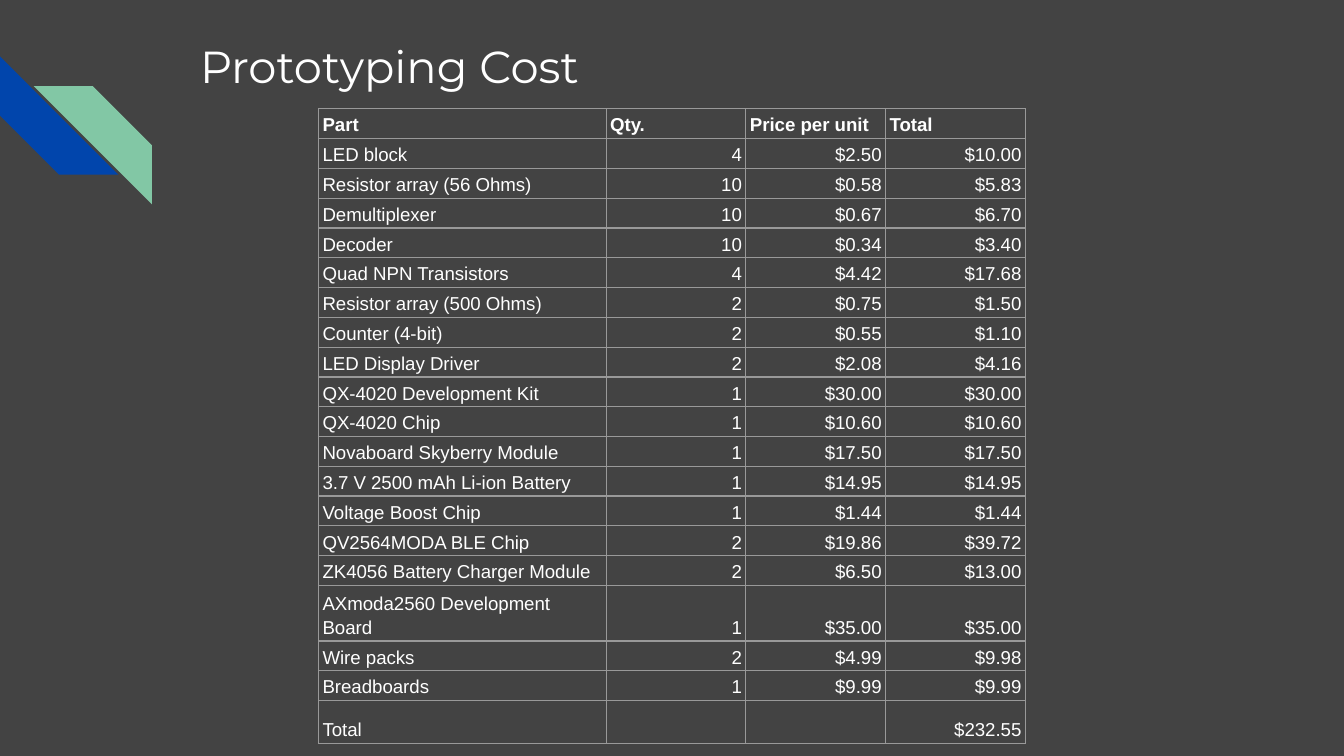
from lxml import etree
from pptx import Presentation
from pptx.dml.color import RGBColor
from pptx.enum.shapes import MSO_SHAPE
from pptx.enum.text import MSO_ANCHOR, PP_ALIGN
from pptx.oxml.ns import qn
from pptx.util import Inches, Pt

STRIPE = MSO_SHAPE.DIAGONAL_STRIPE
TOP, BOTTOM = MSO_ANCHOR.TOP, MSO_ANCHOR.BOTTOM
LEFT, RIGHT = PP_ALIGN.LEFT, PP_ALIGN.RIGHT

ROWS = [
    ("Part", "Qty.", "Price per unit", "Total"),
    ("LED block", "4", "$2.50", "$10.00"),
    ("Resistor array (56 Ohms)", "10", "$0.58", "$5.83"),
    ("Demultiplexer", "10", "$0.67", "$6.70"),
    ("Decoder", "10", "$0.34", "$3.40"),
    ("Quad NPN Transistors", "4", "$4.42", "$17.68"),
    ("Resistor array (500 Ohms)", "2", "$0.75", "$1.50"),
    ("Counter (4-bit)", "2", "$0.55", "$1.10"),
    ("LED Display Driver", "2", "$2.08", "$4.16"),
    ("QX-4020 Development Kit", "1", "$30.00", "$30.00"),
    ("QX-4020 Chip", "1", "$10.60", "$10.60"),
    ("Novaboard Skyberry Module", "1", "$17.50", "$17.50"),
    ("3.7 V 2500 mAh Li-ion Battery", "1", "$14.95", "$14.95"),
    ("Voltage Boost Chip", "1", "$1.44", "$1.44"),
    ("QV2564MODA BLE Chip", "2", "$19.86", "$39.72"),
    ("ZK4056 Battery Charger Module", "2", "$6.50", "$13.00"),
    ("AXmoda2560 Development Board", "1", "$35.00", "$35.00"),
    ("Wire packs", "2", "$4.99", "$9.98"),
    ("Breadboards", "1", "$9.99", "$9.99"),
    ("Total", "", "", "$232.55"),
]
COL_WIDTHS = [2.14, 1.04, 1.04, 1.04]
ROW_HEIGHT = 0.22


def rgb(value):
    return RGBColor.from_string(value)


def add_text(p, text, **formats):
    r = p.add_run()
    r.text = text
    r.font.color.rgb = rgb("FFFFFF")
    for name, value in formats.items():
        setattr(r.font, name, value)


# Widescreen 16:9 slide
prs = Presentation()
prs.slide_width, prs.slide_height = Inches(10), Inches(10 * 9 / 16)
slide = prs.slides.add_slide(prs.slide_layouts[6])
slide.background.fill.solid()
slide.background.fill.fore_color.rgb = rgb("434343")

# Corner stripes
for left, top, rotation, color in [(0, 0.42, 270, "0145AC"), (0.25, 0.64, 90, "82C7A5")]:
    s = slide.shapes.add_shape(STRIPE, Inches(left), Inches(top), Inches(0.88), Inches(0.88))
    s.rotation = rotation
    s.shadow.inherit = False
    s.fill.solid()
    s.fill.fore_color.rgb = rgb(color)
    s.line.fill.background()

# Title
s = slide.shapes.add_textbox(Inches(1.39), Inches(0.19), Inches(7.7), Inches(1))
tf = s.text_frame
box = {"word_wrap": True, "vertical_anchor": TOP, "margin_left": Inches(0.1),
       "margin_right": Inches(0.1), "margin_top": Inches(0.1), "margin_bottom": Inches(0.1)}
for name, value in box.items():
    setattr(tf, name, value)
add_text(tf.paragraphs[0], "Prototyping Cost", name="Montserrat", size=Pt(24))

# Cost table
frame = slide.shapes.add_table(len(ROWS), len(COL_WIDTHS), Inches(2.37), Inches(0.81),
                               Inches(sum(COL_WIDTHS)), Inches(ROW_HEIGHT * len(ROWS)))
table = frame.table
table.horz_banding = False
for column, width in zip(table.columns, COL_WIDTHS):
    column.width = Inches(width)
for row in table.rows:
    row.height = Inches(ROW_HEIGHT)
# A low frame lets the rows keep their own heights instead of being stretched
frame.height = Inches(3.28)

for i, values in enumerate(ROWS):
    for j, text in enumerate(values):
        cell = table.cell(i, j)
        formats = {"margin_left": Inches(0.03), "margin_right": Inches(0.03),
                   "margin_top": Inches(0.01),
                   "margin_bottom": Inches(0.02 if text else 0.01),
                   "vertical_anchor": BOTTOM}
        for name, value in formats.items():
            setattr(cell, name, value)

        # Thin grey borders come before the fill in the cell properties
        tc_pr = cell._tc.get_or_add_tcPr()
        for side in ("a:lnL", "a:lnR", "a:lnT", "a:lnB"):
            ln = etree.SubElement(tc_pr, qn(side), w=str(Pt(0.75)))
            fill = etree.SubElement(ln, qn("a:solidFill"))
            etree.SubElement(fill, qn("a:srgbClr"), val="999999")
        cell.fill.background()

        if text:
            p = cell.text_frame.paragraphs[0]
            p.line_spacing = 1.15
            p.alignment = RIGHT if i and j else LEFT
            add_text(p, text, name="Arial", size=Pt(10), bold=i == 0)

prs.save("out.pptx")
